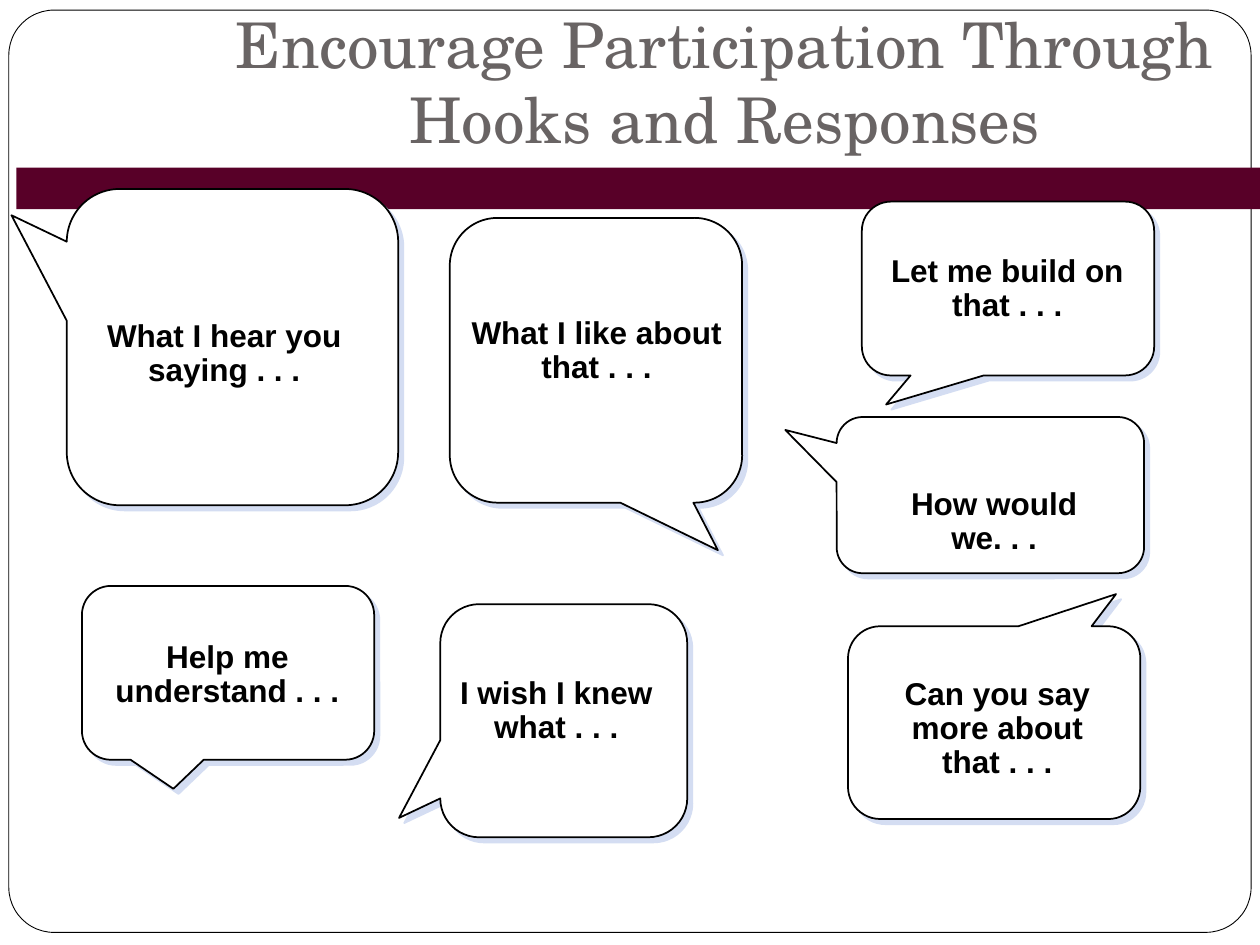
from dataclasses import dataclass

from lxml import etree
from pptx import Presentation
from pptx.dml.color import RGBColor
from pptx.enum.shapes import MSO_SHAPE
from pptx.enum.text import MSO_ANCHOR, PP_ALIGN
from pptx.oxml.ns import qn
from pptx.util import Inches, Pt

ROUNDED = MSO_SHAPE.ROUNDED_RECTANGLE
RECT = MSO_SHAPE.RECTANGLE
CALLOUT = MSO_SHAPE.ROUNDED_RECTANGULAR_CALLOUT
CENTER = PP_ALIGN.CENTER
BOTTOM = MSO_ANCHOR.BOTTOM


@dataclass(frozen=True)
class Theme:
    paper: RGBColor = RGBColor.from_string("FFFFFF")
    ink: RGBColor = RGBColor.from_string("000000")
    band: RGBColor = RGBColor.from_string("580028")
    title: RGBColor = RGBColor.from_string("696464")
    shadow: str = "D4DDF2"
    title_font: str = "TeX Gyre Schola"
    body_font: str = "Arial"
    title_size: Pt = Pt(36)
    body_size: Pt = Pt(18)
    frame_line: Pt = Pt(0.5)
    bubble_line: Pt = Pt(1)


THEME = Theme()

# Bubble box before rotation, rotation, mirrored, tail offset
BUBBLES = [
    ((6.84, 1.6, 2.32, 1.38), 0, False, -0.417),
    ((0.59, 1.44, 2.51, 2.63), 90, False, -0.417),
    ((3.57, 1.73, 2.32, 2.26), 0, True, -0.417),
    ((0.65, 4.65, 2.32, 1.38), 0, False, -0.187),
    ((6.73, 4.97, 2.32, 1.53), 180, False, -0.417),
    ((3.55, 4.74, 1.85, 1.96), 90, True, -0.417),
    ((7.24, 2.71, 1.24, 2.44), 90, False, -0.417),
]

PHRASES = [
    ((0.73, 2.49, 2.1, 0.64), "What I hear you saying . . ."),
    ((3.56, 2.47, 2.35, 0.64), "What I like about that . . ."),
    ((6.82, 1.98, 2.35, 0.64), "Let me build on that . . ."),
    ((6.84, 3.83, 2.1, 0.64), "How would\vwe. . ."),
    ((0.63, 5.04, 2.35, 0.64), "Help me understand . . ."),
    ((3.42, 5.33, 1.99, 0.64), "I wish I knew what . . ."),
    ((6.92, 5.33, 1.99, 0.91), "Can you say more about that . . ."),
]


def inches(box):
    return [Inches(v) for v in box]


def add_filled(s, kind, box, fill, line_width=None):
    sp = s.shapes.add_shape(kind, *inches(box))
    sp.shadow.inherit = False
    sp.fill.solid()
    sp.fill.fore_color.rgb = fill
    if line_width is None:
        sp.line.fill.background()
    else:
        sp.line.color.rgb = THEME.ink
        sp.line.width = line_width
    return sp


def add_backdrop(s, frame_box, band_box):
    """Place the page frame and colour band behind the title."""
    frame = add_filled(s, ROUNDED, frame_box, THEME.paper, THEME.frame_line)
    frame.adjustments[0] = 0.049
    band = add_filled(s, RECT, band_box, THEME.band)
    title = s.shapes.title.element
    for sp in (frame, band):
        title.addprevious(sp.element)


def set_text(tf, text, font, size, color, bold):
    tf.word_wrap = True
    tf.text = text
    p = tf.paragraphs[0]
    p.alignment = CENTER
    for r in p.runs:
        r.font.name = font
        r.font.size = size
        r.font.color.rgb = color
        r.font.bold = bold
    return p


def add_title(s, box, text):
    sp = s.shapes.title
    sp.left, sp.top, sp.width, sp.height = inches(box)
    tf = sp.text_frame
    tf.vertical_anchor = BOTTOM
    tf.margin_left = tf.margin_right = Inches(0.07)
    tf.margin_top, tf.margin_bottom = Inches(0.05), Inches(0.1)
    set_text(tf, text, THEME.title_font, THEME.title_size, THEME.title, False)


def add_hard_shadow(sp):
    """Cast an unblurred shadow to the lower right, whatever the rotation."""
    effects = sp.element.spPr.find(qn("a:effectLst"))
    shadow = etree.SubElement(effects, qn("a:outerShdw"), blurRad="0",
                              dist=str(Pt(4.2)), dir=str(45 * 60000),
                              algn="ctr", rotWithShape="0")
    etree.SubElement(shadow, qn("a:srgbClr"), val=THEME.shadow)


def add_bubble(s, box, rotation, mirrored, tail_x):
    sp = add_filled(s, CALLOUT, box, THEME.paper, THEME.bubble_line)
    for i, value in enumerate((tail_x, 0.667, 0.167)):
        sp.adjustments[i] = value
    sp.rotation = rotation
    if mirrored:
        sp.element.spPr.find(qn("a:xfrm")).set("flipH", "1")
    add_hard_shadow(sp)


def add_phrase(s, box, text):
    tf = s.shapes.add_textbox(*inches(box)).text_frame
    p = set_text(tf, text, THEME.body_font, THEME.body_size, THEME.ink, True)
    p.line_spacing = 0.9


def main():
    prs = Presentation()
    prs.slide_width, prs.slide_height = Inches(10), Inches(7.5)
    s = prs.slides.add_slide(prs.slide_layouts.get_by_name("Title Only"))
    add_backdrop(s, (0.07, 0.08, 9.86, 7.32), (0.13, 1.33, 9.87, 0.33))
    add_title(s, (1.5, 0.17, 8.5, 1.17),
              "Encourage Participation Through Hooks and Responses")
    for bubble in BUBBLES:
        add_bubble(s, *bubble)
    for box, text in PHRASES:
        add_phrase(s, box, text)
    prs.save("out.pptx")


if __name__ == "__main__":
    main()
